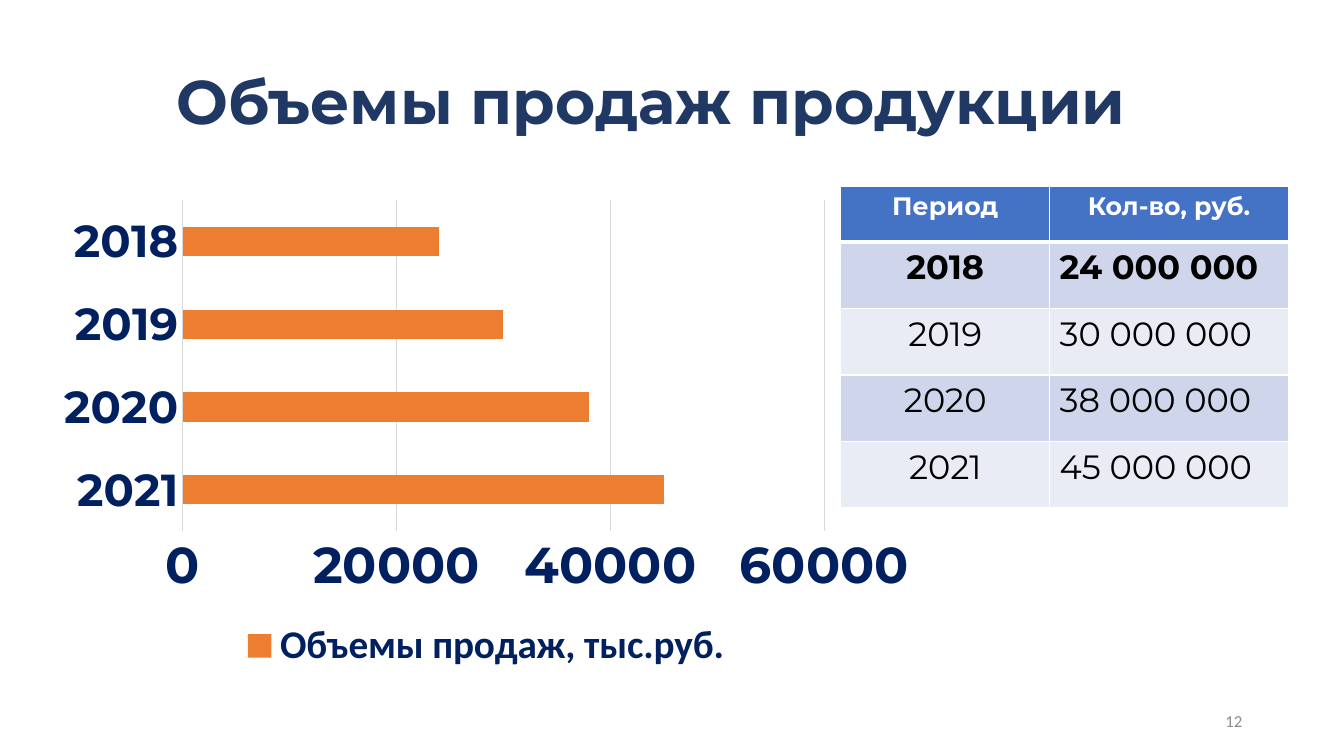
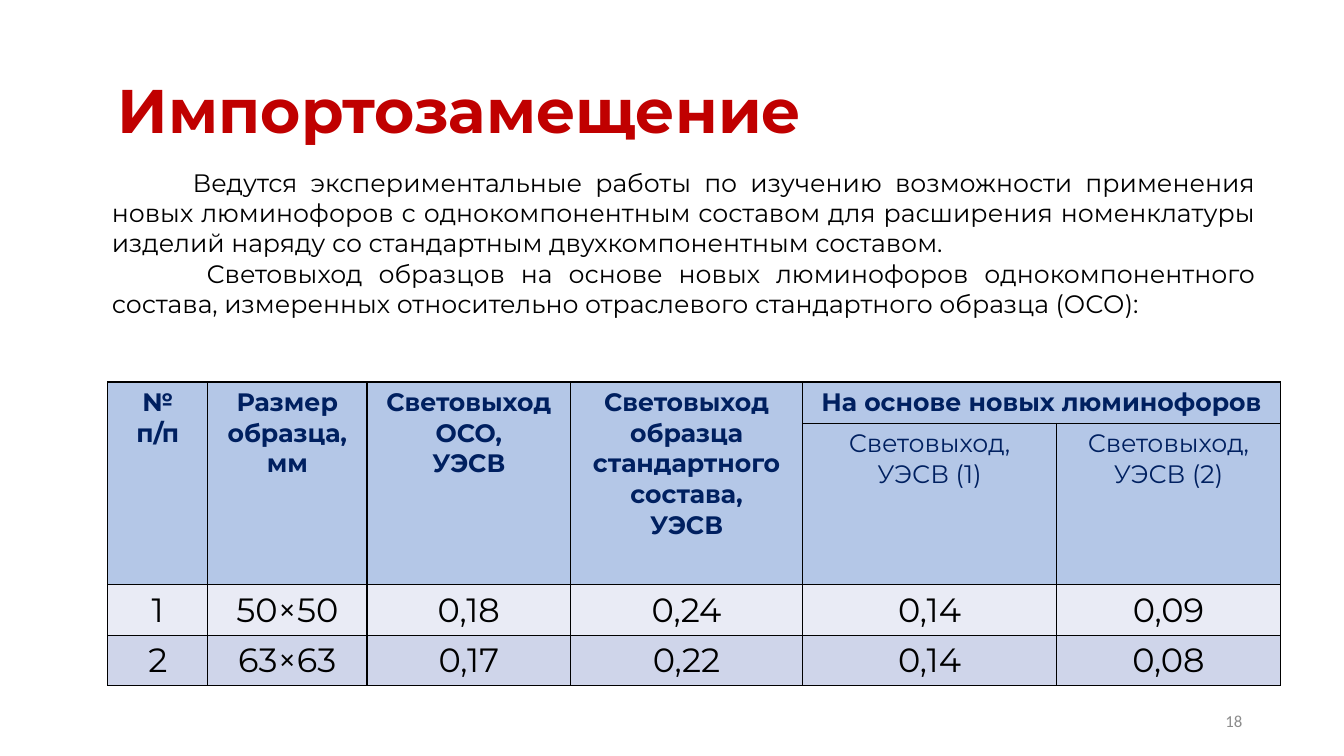
from lxml import etree
from pptx import Presentation
from pptx.chart.data import CategoryChartData
from pptx.dml.color import RGBColor
from pptx.enum.chart import XL_CHART_TYPE, XL_LEGEND_POSITION, XL_TICK_MARK
from pptx.enum.text import MSO_ANCHOR, MSO_AUTO_SIZE, PP_ALIGN
from pptx.oxml import parse_xml
from pptx.oxml.ns import nsdecls, qn
from pptx.util import Inches, Pt

LEFT, MID, RIGHT, JUST = (PP_ALIGN.LEFT, PP_ALIGN.CENTER, PP_ALIGN.RIGHT,
                          PP_ALIGN.JUSTIFY)
TOP, CENTER = MSO_ANCHOR.TOP, MSO_ANCHOR.MIDDLE
BARS, BELOW = XL_CHART_TYPE.BAR_CLUSTERED, XL_LEGEND_POSITION.BOTTOM
NO_TICK = XL_TICK_MARK.NONE

HEX = dict(white="FFFFFF", black="000000", navy="002060", title="203864",
           red="C00000", head="4472C4", soft="B4C7E7", dark="CFD5EA",
           light="E9EBF5", bar="ED7D31", grid="D9D9D9", page="8C8C8C")
FONT, PLAIN = "Montserrat", "Calibri"
WIDE, HIGH = 13.33, 7.5

SALES = {
    "title": "Объемы продаж продукции",
    "series": "Объемы продаж, тыс.руб.",
    "years": [("2021", 45000), ("2020", 38000), ("2019", 30000),
              ("2018", 24000)],
    "head": ["Период", "Кол-во, руб."],
    "rows": [("2018", "24 000 000"), ("2019", "30 000 000"),
             ("2020", "38 000 000"), ("2021", "45 000 000")],
}
IMPORT = {
    "title": "Импортозамещение",
    "body": [
        "Ведутся экспериментальные работы по изучению возможности применения "
        "новых люминофоров с однокомпонентным составом для расширения "
        "номенклатуры изделий наряду со стандартным двухкомпонентным составом.",
        "Световыход образцов на основе новых люминофоров однокомпонентного "
        "состава, измеренных относительно отраслевого стандартного образца "
        "(ОСО):"],
    "head": ["№ п/п", "Размер образца, мм", "Световыход\nОСО,\nУЭСВ",
             "Световыход образца стандартного состава,\nУЭСВ",
             "На основе новых люминофоров"],
    "sub": ["Световыход,\nУЭСВ (1)", "Световыход,\nУЭСВ (2)"],
    "rows": [("1", "50×50", "0,18", "0,24", "0,14", "0,09"),
             ("2", "63×63", "0,17", "0,22", "0,14", "0,08")],
}


def rgb(name):
    return RGBColor.from_string(HEX[name])


def style(font, size, color, bold=False, face=FONT):
    font.name, font.size, font.bold = face, Pt(size), bold
    font.color.rgb = rgb(color)


def put(frame, text, size=18, color="black", bold=False, face=FONT,
        align=LEFT, anchor=TOP, indents=()):
    """Fill a text frame, one paragraph a line; indents are first-line inches."""
    frame.word_wrap, frame.vertical_anchor = True, anchor
    for i, line in enumerate(text.split("\n")):
        par = frame.paragraphs[0] if i == 0 else frame.add_paragraph()
        props = par._p.get_or_add_pPr()
        props.set("marL", "0")
        props.set("indent", str(Inches(indents[i]) if indents else 0))
        par.alignment, par.line_spacing = align, 1.0
        par.space_before = par.space_after = Pt(0)
        etree.SubElement(props, qn("a:buNone"))
        run = par.add_run()
        run.text = line
        style(run.font, size, color, bold, face)


def place(shape, box):
    shape.left, shape.top, shape.width, shape.height = map(Inches, box)
    shape.text_frame.auto_size = MSO_AUTO_SIZE.NONE


def start(deck, layout, title, box, color, page, align=LEFT):
    """Add a slide with its title and page number."""
    slide = deck.slides.add_slide(deck.slide_layouts[layout])
    place(slide.shapes.title, box)
    put(slide.shapes.title.text_frame, title, 44, color, True, align=align)
    foot = slide.shapes.add_textbox(*map(Inches, (WIDE - 3.91, 6.95, 3, 0.4)))
    put(foot.text_frame, page, 12, "page", face=PLAIN, align=RIGHT,
        anchor=CENTER)
    return slide


def edge(cell, color, **widths):
    """Draw the four borders, 1 pt unless a side (L, R, T, B) is given."""
    props = cell._tc.get_or_add_tcPr()
    for i, side in enumerate("LRTB"):
        props.insert(i, parse_xml(
            f'<a:ln{side} {nsdecls("a")} w="{Pt(widths.get(side, 1))}">'
            f'<a:solidFill><a:srgbClr val="{HEX[color]}"/></a:solidFill>'
            f'</a:ln{side}>'))


def grid(slide, left, top, cols, rows, fills, line, rule=1):
    """Add a table with one fill a row; rule is the width below row one."""
    table = slide.shapes.add_table(
        len(rows), len(cols), *map(Inches, (left, top, sum(cols), sum(rows)))
    ).table
    for col, width in zip(table.columns, cols):
        col.width = Inches(width)
    for r, (height, fill) in enumerate(zip(rows, fills)):
        table.rows[r].height = Inches(height)
        for cell in table.rows[r].cells:
            cell.fill.solid()
            cell.fill.fore_color.rgb = rgb(fill)
            edge(cell, line, **({"B": rule} if r == 0 else
                                {"T": rule} if r == 1 else {}))
    return table


def plot(slide, box):
    data = CategoryChartData()
    data.categories = [year for year, _ in SALES["years"]]
    data.add_series(SALES["series"], [sum_ for _, sum_ in SALES["years"]])
    chart = slide.shapes.add_chart(BARS, *map(Inches, box), data).chart
    style(chart.font, 28, "black", face=PLAIN)
    chart.has_title, chart.has_legend = False, True
    chart.legend.position, chart.legend.include_in_layout = BELOW, False
    style(chart.legend.font, 28, "navy", True, PLAIN)

    bars = chart.plots[0]
    bars.gap_width, bars.vary_by_categories = 182, False
    fill = bars.series[0].format.fill
    fill.solid()
    fill.fore_color.rgb = rgb("bar")

    years, sums = chart.category_axis, chart.value_axis
    for axis, size in ((years, 32), (sums, 36)):
        axis.major_tick_mark = axis.minor_tick_mark = NO_TICK
        style(axis.tick_labels.font, size, "navy", True)
    sums.minimum_scale, sums.maximum_scale, sums.major_unit = 0, 60000, 20000
    sums.has_major_gridlines = True
    sums.format.line.fill.background()
    for line in (years.format.line, sums.major_gridlines.format.line):
        line.color.rgb, line.width = rgb("grid"), Pt(0.75)

    area = chart._chartSpace.find(".//" + qn("c:plotArea"))
    for old in area.findall(qn("c:layout")):
        area.remove(old)
    share = "".join(f'<c:{key} val="{val}"/>' for key, val in (
        ("layoutTarget", "inner"), ("xMode", "edge"), ("yMode", "edge"),
        ("x", 0.155), ("y", 0.02), ("w", 0.73), ("h", 0.68)))
    area.insert(0, parse_xml(f'<c:layout {nsdecls("c")}><c:manualLayout>'
                             f'{share}</c:manualLayout></c:layout>'))


def sales(deck):
    slide = start(deck, 5, SALES["title"], (1.15, 0.57, 10.62, 0.84),
                  "title", "12", MID)
    plot(slide, (0.46, 1.89, 8.72, 4.83))
    table = grid(slide, 8.34, 1.85, [2.07, 2.37], [0.55] + [0.66] * 4,
                 ["head"] + ["dark", "light"] * 2, "white", rule=3)
    for c, text in enumerate(SALES["head"]):
        put(table.cell(0, c).text_frame, text, 18, "white", True, align=MID)
    for r, row in enumerate(SALES["rows"], 1):
        for c, text in enumerate(row):
            put(table.cell(r, c).text_frame, text, 24, bold=r == 1,
                align=(MID, LEFT)[c])


def imports(deck):
    slide = start(deck, 1, IMPORT["title"], (1.07, 0.66, 11.2, 0.84),
                  "red", "18")
    body = slide.placeholders[1]
    place(body, (1.01, 1.61, 11.54, 1.95))
    put(body.text_frame, "\n".join(IMPORT["body"]), align=JUST,
        indents=(0.8, 0.94))
    table = grid(slide, 1.07, 3.79, [0.99, 1.58, 2.02, 2.3, 2.52, 2.22],
                 [0.41, 1.6, 0.5, 0.5], ["soft", "soft", "light", "dark"],
                 "black")
    for c in range(4):
        table.cell(0, c).merge(table.cell(1, c))
    table.cell(0, 4).merge(table.cell(0, 5))
    for c, text in enumerate(IMPORT["head"]):
        put(table.cell(0, c).text_frame, text, 18, "navy", True, align=MID)
    for c, text in enumerate(IMPORT["sub"], 4):
        put(table.cell(1, c).text_frame, text, 18, "navy", align=MID)
    for r, row in enumerate(IMPORT["rows"], 2):
        for c, text in enumerate(row):
            put(table.cell(r, c).text_frame, text, 24, align=MID)


def main():
    deck = Presentation()
    deck.slide_width, deck.slide_height = Inches(WIDE), Inches(HIGH)
    sales(deck)
    imports(deck)
    deck.save("out.pptx")


if __name__ == "__main__":
    main()
